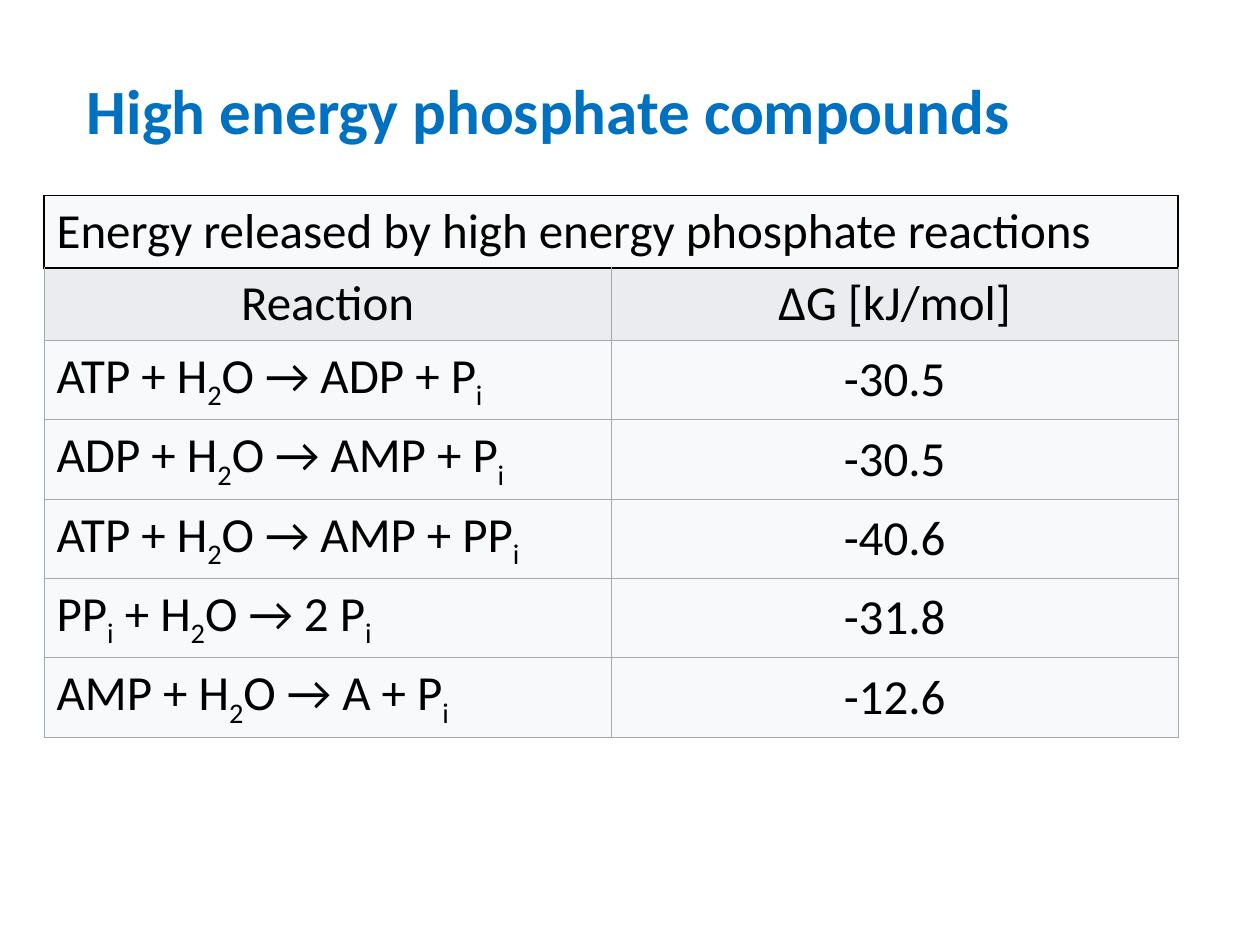
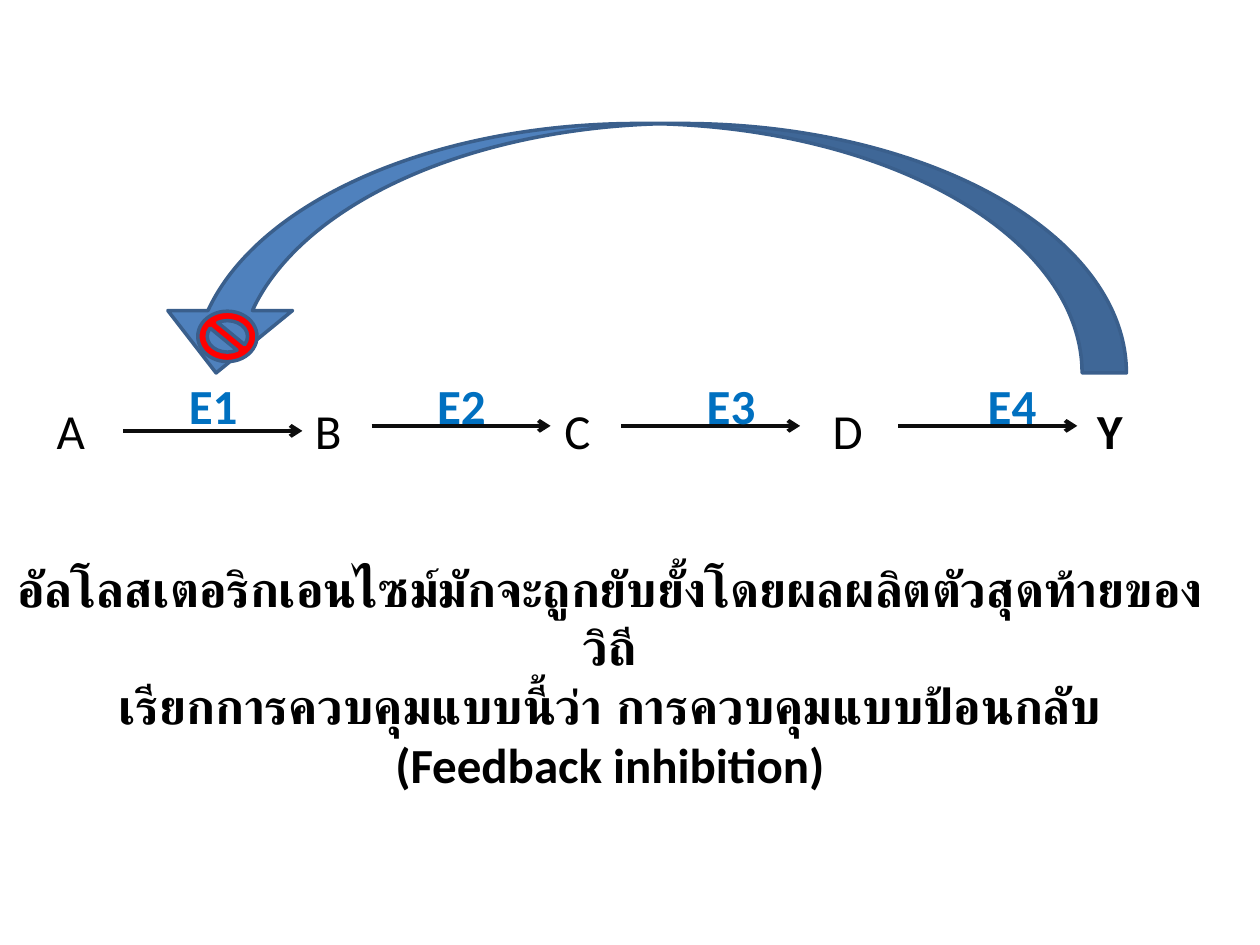
from dataclasses import dataclass
from lxml import etree
from pptx import Presentation
from pptx.dml.color import RGBColor
from pptx.enum import lang, shapes, text
from pptx.oxml import ns
from pptx.util import Inches, Pt


@dataclass
class Theme:
    font: str = "Calibri"
    blue: str = "0070C0"
    black: str = "000000"
    arrow: str = "0D0D0D"
    shape: str = "4F81BD"
    edge: str = "3A5F8C"
    red: str = "FF0000"
    grid: str = "A2A9B1"
    head: str = "EAECF0"
    cell: str = "F8F9FA"
    title: int = 36
    body: int = 28


T = Theme()
RGB = RGBColor.from_string


def write(para, words, color=T.black, size=T.body, bold=False):
    """Add runs; every second part between bars is a subscript."""
    for n, part in enumerate(words.split("|")):
        if not part:
            continue
        run = para.add_run()
        run.text = part
        font = run.font
        font.name, font.size, font.bold = T.font, Pt(size), bold
        font.color.rgb = RGB(color)
        if n % 2:
            font._element.set("baseline", "-25000")


def label(slide, left, top, width, height):
    frame = slide.shapes.add_textbox(
        Inches(left), Inches(top), Inches(width), Inches(height)).text_frame
    frame.word_wrap = True
    return frame


deck = Presentation()
deck.slide_width, deck.slide_height = Inches(10), Inches(7.5)

# Slide 1: title
slide = deck.slides.add_slide(deck.slide_layouts[5])
title = slide.shapes.title
title.left, title.top = Inches(0.59), Inches(0.52)
title.width, title.height = Inches(7.56), Inches(0.71)
frame = title.text_frame
frame.word_wrap = True
frame.auto_size = text.MSO_AUTO_SIZE.NONE
frame.vertical_anchor = text.MSO_ANCHOR.TOP
para = frame.paragraphs[0]
para.alignment = text.PP_ALIGN.LEFT
write(para, "High energy phosphate compounds", T.blue, T.title, True)

# Slide 1: table of reactions
rows = [
    ("Energy released by high energy phosphate reactions", ""),
    ("Reaction", "ΔG [kJ/mol]"),
    ("ATP + H|2|O → ADP + P|i", "-30.5"),
    ("ADP + H|2|O →\u00a0AMP\u00a0+ P|i".replace("\u00a0", " "), "-30.5"),
    ("ATP + H|2|O → AMP + PP|i", "-40.6"),
    ("PP|i| + H|2|O → 2 P|i", "-31.8"),
    ("AMP + H|2|O → A + P|i", "-12.6"),
]
table = slide.shapes.add_table(
    len(rows), 2, Inches(0.35), Inches(1.55), Inches(9), Inches(3.97)).table
table.first_row = table.horz_banding = False
for r, row in enumerate(rows):
    table.rows[r].height = Inches(0.57 if r < 2 else 0.63)
    for c, words in enumerate(row):
        cell = table.cell(r, c)
        cell.vertical_anchor = text.MSO_ANCHOR.MIDDLE
        cell.fill.solid()
        cell.fill.fore_color.rgb = RGB(T.head if r == 1 else T.cell)
        para = cell.text_frame.paragraphs[0]
        if r == 1 or c == 1:
            para.alignment = text.PP_ALIGN.CENTER
        write(para, words)
        # Cell borders: black around the caption, grey elsewhere
        props = cell._tc.get_or_add_tcPr()
        for n, side in enumerate(("lnL", "lnR", "lnT", "lnB")):
            dark = r == 0 or (r == 1 and side == "lnT")
            line = etree.Element(ns.qn("a:" + side), w=str(Pt(1 if dark else 0.75)))
            fill = etree.SubElement(line, ns.qn("a:solidFill"))
            etree.SubElement(fill, ns.qn("a:srgbClr"), val=T.black if dark else T.grid)
            props.insert(n, line)
table.cell(0, 0).merge(table.cell(0, 1))

# Slide 2: compounds and enzymes, each row spaced by tab stops
slide = deck.slides.add_slide(deck.slide_layouts[6])


def tabs(para, stops):
    props = para._p.get_or_add_pPr()
    group = etree.SubElement(props, ns.qn("a:tabLst"))
    for stop in stops:
        etree.SubElement(group, ns.qn("a:tab"), pos=str(Inches(stop)), algn="l")


para = label(slide, 0.35, 3.13, 9.15, 0.57).paragraphs[0]
tabs(para, (2.05, 4.03, 6.16, 8.26))
write(para, "A\tB\tC\tD\t")
write(para, "Y", bold=True)

# Slide 2: reaction arrows
for left, top in ((0.98, 3.42), (2.95, 3.38), (4.93, 3.38), (7.13, 3.38)):
    arrow = slide.shapes.add_connector(
        shapes.MSO_CONNECTOR.STRAIGHT,
        Inches(left), Inches(top), Inches(left + 1.42), Inches(top))
    arrow.line.color.rgb = RGB(T.arrow)
    arrow.line.width = Pt(2.25)
    etree.SubElement(arrow.line._get_or_add_ln(), ns.qn("a:tailEnd"), type="arrow")
    etree.SubElement(arrow._element.spPr, ns.qn("a:effectLst"))

para = label(slide, 1.4, 2.93, 7.15, 0.57).paragraphs[0]
tabs(para, (1.97, 4.11, 6.34))
write(para, "E1\tE2\tE3\tE4", T.blue, bold=True)

# Slide 2: feedback arrow and stop sign
kinds = shapes.MSO_SHAPE
for kind, box, color in (
        (kinds.CURVED_DOWN_ARROW, (1.22, 0.98, 7.72, 1.98), T.shape),
        (kinds.NO_SYMBOL, (1.57, 2.47, 0.47, 0.4), T.red)):
    mark = slide.shapes.add_shape(kind, *map(Inches, box))
    mark.shadow.inherit = False
    mark.fill.solid()
    mark.fill.fore_color.rgb = RGB(color)
    mark.line.color.rgb = RGB(T.edge)
    mark.line.width = Pt(2)
    if kind == kinds.CURVED_DOWN_ARROW:
        for n, value in enumerate((0.178, 0.5, 0.25)):
            mark.adjustments[n] = value
        mark._element.spPr.find(ns.qn("a:xfrm")).set("flipH", "1")

# Slide 2: explanation
frame = label(slide, 0, 4.38, 9.68, 1.95)
for n, words in enumerate((
        "อัลโลสเตอริกเอนไซม์มักจะถูกยับยั้งโดยผลผลิตตัวสุดท้ายของวิถี",
        "เรียกการควบคุมแบบนี้ว่า การควบคุมแบบป้อนกลับ (Feedback inhibition)")):
    para = frame.add_paragraph() if n else frame.paragraphs[0]
    para.alignment = text.PP_ALIGN.CENTER
    write(para, words, bold=True)
    para.runs[0].font.language_id = lang.MSO_LANGUAGE_ID.THAI

deck.save("out.pptx")
